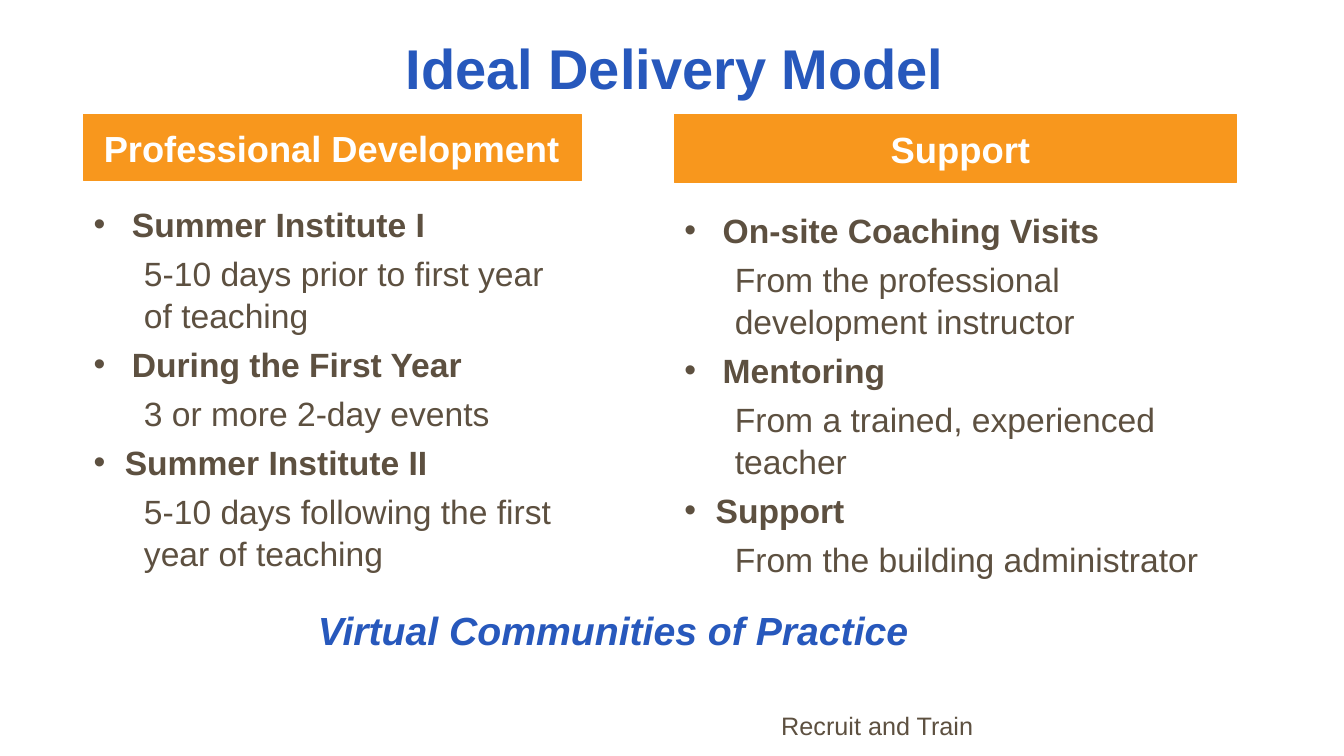
from lxml.etree import SubElement
from pptx import Presentation
from pptx.dml.color import RGBColor
from pptx.enum.shapes import MSO_SHAPE
from pptx.enum.text import MSO_ANCHOR, PP_ALIGN
from pptx.oxml.ns import qn
from pptx.util import Inches, Pt

HEX = {"blue": "2758BC", "orange": "F8971D", "brown": "5D5040", "white": "FFFFFF"}
TITLE = "Ideal Delivery Model"
CLOSING = "Virtual Communities of Practice"
FOOTER = "Recruit and Train"
COLUMNS = [
    {"head": "Professional Development", "size": 25.9, "align": PP_ALIGN.LEFT,
     "left": 0.83, "width": 4.94, "bar": 0.65, "top": 1.95, "height": 4.14,
     "items": [("Summer Institute I", "5-10 days prior to first year of teaching"),
               ("During the First Year", "3 or more 2-day events"),
               ("Summer Institute II", "5-10 days following the first year of teaching")]},
    {"head": "Support", "size": 26, "align": PP_ALIGN.CENTER,
     "left": 6.69, "width": 5.57, "bar": 0.67, "top": 2.01, "height": 4.22,
     "items": [("On-site Coaching Visits", "From the professional development instructor"),
               ("Mentoring", "From a trained, experienced teacher"),
               ("Support", "From the building administrator")]},
]
BAR_TOP = 1.14
INDENTS = (0.38, 0.38, 0.31)
SUB_INDENT = 0.5


def color(name):
    return RGBColor.from_string(HEX[name])


def style(para, size, hue, align=PP_ALIGN.LEFT, **looks):
    para.alignment = align
    para.font.color.rgb = color(hue)
    for key, value in {"name": "Arial", "size": Pt(size), **looks}.items():
        setattr(para.font, key, value)


def add_text(slide, box):
    frame = slide.shapes.add_textbox(*map(Inches, box)).text_frame
    frame.word_wrap = True
    return frame


def indent(para, left, bullet=False):
    props = para._p.get_or_add_pPr()
    props.set("marL", str(Inches(left)))
    props.set("indent", str(-Inches(left) if bullet else 0))
    if bullet:
        tint = SubElement(props, qn("a:buClr"))
        SubElement(tint, qn("a:srgbClr"), val=HEX["brown"])
        SubElement(props, qn("a:buFont"), typeface="Arial")
        SubElement(props, qn("a:buChar"), char="•")


def add_bar(slide, col):
    box = (col["left"], BAR_TOP, col["width"], col["bar"])
    bar = slide.shapes.add_shape(MSO_SHAPE.RECTANGLE, *map(Inches, box))
    bar.shadow.inherit = False
    bar.fill.solid()
    bar.fill.fore_color.rgb = bar.line.color.rgb = color("orange")
    bar.line.width = Pt(0.75)
    frame = bar.text_frame
    frame.margin_left = Inches(0.2)
    frame.vertical_anchor = MSO_ANCHOR.MIDDLE
    frame.text = col["head"]
    style(frame.paragraphs[0], col["size"], "white", col["align"], bold=True)


def add_list(slide, col):
    frame = add_text(slide, (col["left"], col["top"], col["width"], col["height"]))
    lines = [(text, step, level) for pair, step in zip(col["items"], INDENTS)
             for level, text in enumerate(pair)]
    for num, (text, step, level) in enumerate(lines):
        para = frame.add_paragraph() if num else frame.paragraphs[0]
        para.text = text
        para.level = level
        para.line_spacing = 1.05
        if num:
            para.space_before = Pt(4.8)
        indent(para, SUB_INDENT if level else step, bullet=not level)
        style(para, 24, "brown", bold=not level)


def main():
    deck = Presentation()
    deck.slide_width, deck.slide_height = Inches(13.33), Inches(7.5)
    slide = deck.slides.add_slide(deck.slide_layouts[5])

    title = slide.shapes.title
    title.left, title.top, title.width, title.height = map(Inches, (2.32, 0.26, 8.74, 0.79))
    title.text_frame.text = TITLE
    title.text_frame.vertical_anchor = MSO_ANCHOR.BOTTOM
    style(title.text_frame.paragraphs[0], 40, "blue", PP_ALIGN.CENTER, bold=True)

    for col in COLUMNS:
        add_bar(slide, col)
        add_list(slide, col)

    closing = add_text(slide, (1.87, 5.97, 8.42, 0.57))
    closing.text = CLOSING
    style(closing.paragraphs[0], 28, "blue", PP_ALIGN.CENTER, bold=True, italic=True)

    footer = add_text(slide, (7.65, 7, 4.59, 0.45))
    footer.text = FOOTER
    style(footer.paragraphs[0], 18, "brown")

    deck.save("out.pptx")


if __name__ == "__main__":
    main()
